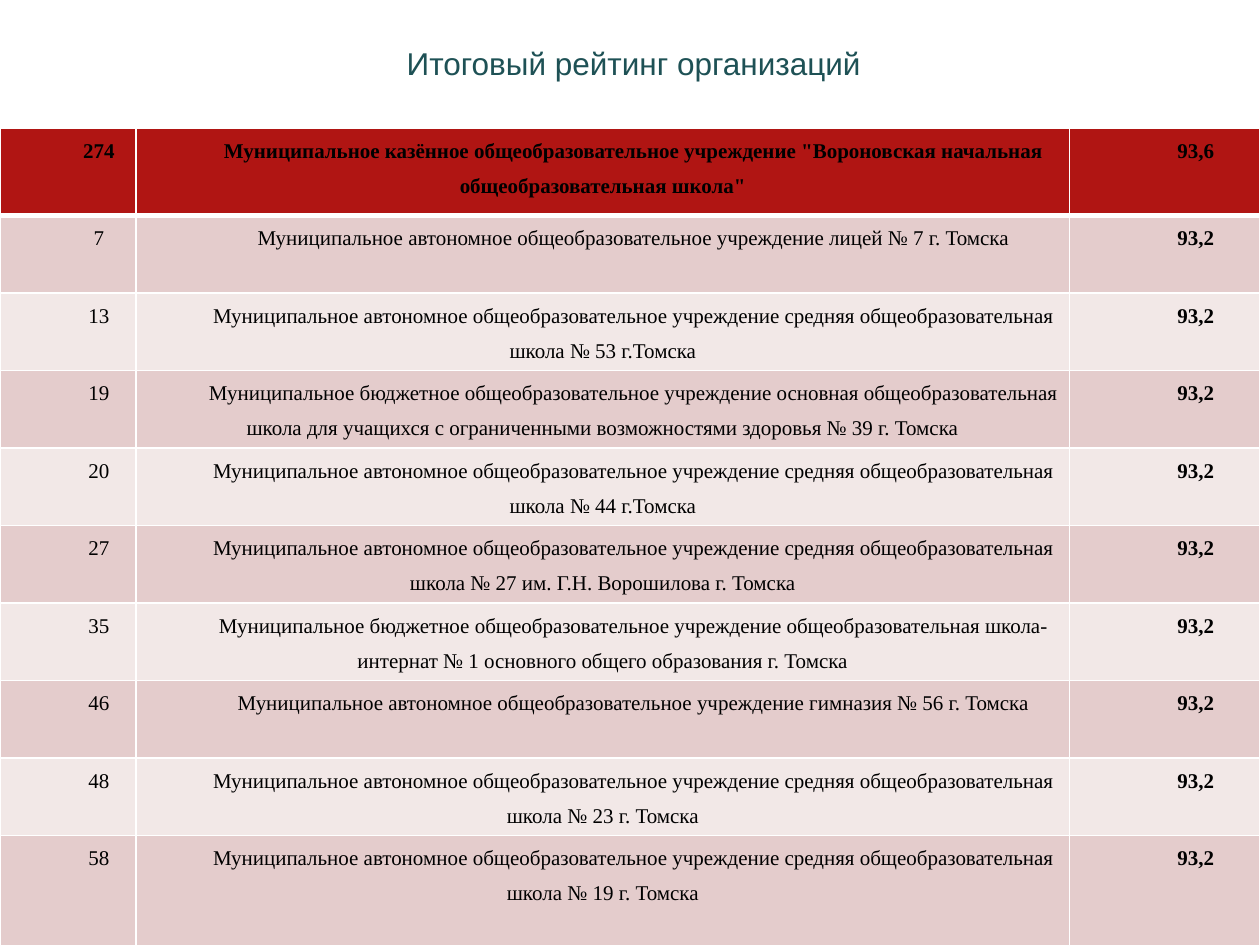
from lxml import etree
from pptx import Presentation
from pptx.dml.color import RGBColor
from pptx.enum.text import MSO_ANCHOR, PP_ALIGN
from pptx.oxml.ns import qn
from pptx.util import Inches, Pt

CENTER = PP_ALIGN.CENTER
TOP = MSO_ANCHOR.TOP
TITLE_ONLY = 5

GRID_COLUMNS, GRID_ROWS = 1000, 750
TITLE_BOX = (50, 30, 900, 125)
TABLE_BOX = (0, 102, 1000, 664)
COLUMN_SPANS = (108, 741, 151)
HEADER_SPAN, LAST_SPAN = 69, 103

HEADER_FILL = "B01513"
BAND_FILLS = ("E4CCCC", "F2E8E7")
BORDER = "FFFFFF"
THIN, THICK = 1, 3

TITLE = "Итоговый рейтинг организаций"
AUTONOMOUS = "Муниципальное автономное общеобразовательное учреждение "
BUDGET = "Муниципальное бюджетное общеобразовательное учреждение "
SECONDARY = AUTONOMOUS + "средняя общеобразовательная школа "
RATING = (
    ("274", "Муниципальное казённое общеобразовательное учреждение "
            "\"Вороновская начальная общеобразовательная школа\"", "93,6"),
    ("7", AUTONOMOUS + "лицей № 7 г. Томска", "93,2"),
    ("13", SECONDARY + "№ 53 г.Томска", "93,2"),
    ("19", BUDGET + "основная общеобразовательная школа для учащихся "
           "с ограниченными возможностями здоровья № 39 г. Томска", "93,2"),
    ("20", SECONDARY + "№ 44 г.Томска", "93,2"),
    ("27", SECONDARY + "№ 27 им. Г.Н. Ворошилова г. Томска", "93,2"),
    ("35", BUDGET + "общеобразовательная школа-интернат № 1 "
           "основного общего образования г. Томска", "93,2"),
    ("46", AUTONOMOUS + "гимназия № 56 г. Томска", "93,2"),
    ("48", SECONDARY + "№ 23 г. Томска", "93,2"),
    ("58", SECONDARY + "№ 19 г. Томска", "93,2"),
)


def color(code):
    return RGBColor.from_string(code)


def apply(target, values):
    for name, value in values.items():
        setattr(target, name, value)


def place(deck, box):
    column = deck.slide_width / GRID_COLUMNS
    row = deck.slide_height / GRID_ROWS
    left, top, width, height = box
    return [round(length) for length in
            (left * column, top * row, width * column, height * row)]


def write(para, text, font, size, bold, ink):
    para.alignment = CENTER
    span = para.add_run()
    span.text = text
    apply(span.font, {"name": font, "size": Pt(size), "bold": bold})
    span.font.color.rgb = color(ink)


def add_title(deck, page, box):
    title = page.shapes.title
    left, top, width, height = place(deck, box)
    apply(title, {"left": left, "top": top, "width": width, "height": height})
    frame = title.text_frame
    apply(frame, {"vertical_anchor": TOP, "word_wrap": True,
                  "margin_left": Inches(0.16), "margin_right": Inches(0.1)})
    write(frame.paragraphs[0], TITLE, "Arial", 18, False, "1E5155")


def add_borders(cell, widths):
    properties = cell._tc.get_or_add_tcPr()
    for side, width in widths.items():
        line = etree.SubElement(properties, qn(f"a:ln{side}"), w=str(Pt(width)))
        fill = etree.SubElement(line, qn("a:solidFill"))
        etree.SubElement(fill, qn("a:srgbClr"), val=BORDER)


def fill_cell(cell, text, bold, fill, borders):
    apply(cell, {"margin_left": Inches(0.07), "margin_right": Inches(0.07),
                 "margin_top": 0, "margin_bottom": 0, "vertical_anchor": TOP})
    add_borders(cell, borders)
    cell.fill.solid()
    cell.fill.fore_color.rgb = color(fill)
    para = cell.text_frame.paragraphs[0]
    para.line_spacing = 1.5
    para._p.get_or_add_pPr().set("indent", str(Inches(0.49)))
    write(para, text, "Times New Roman", 12, bold, "000000")


def add_rating(deck, page, box):
    table = page.shapes.add_table(
        len(RATING), len(COLUMN_SPANS), *place(deck, box)).table
    for column, span in zip(table.columns, COLUMN_SPANS):
        column.width = round(deck.slide_width * span / GRID_COLUMNS)
    middle_rows = len(RATING) - 2
    middle_span = (box[3] - HEADER_SPAN - LAST_SPAN) / middle_rows
    row_spans = [HEADER_SPAN] + [middle_span] * middle_rows + [LAST_SPAN]
    for number, (row, span) in enumerate(zip(table.rows, row_spans)):
        row.height = round(deck.slide_height * span / GRID_ROWS)
        header = number == 0
        fill = HEADER_FILL if header else BAND_FILLS[(number - 1) % 2]
        borders = {"L": THIN, "R": THIN,
                   "T": THICK if number == 1 else THIN,
                   "B": THICK if header else THIN}
        for index, (cell, text) in enumerate(zip(row.cells, RATING[number])):
            score = index == len(COLUMN_SPANS) - 1
            fill_cell(cell, text, header or score, fill, borders)


def main():
    deck = Presentation()
    apply(deck, {"slide_width": Inches(10), "slide_height": Inches(7.5)})
    page = deck.slides.add_slide(deck.slide_layouts[TITLE_ONLY])
    add_title(deck, page, TITLE_BOX)
    add_rating(deck, page, TABLE_BOX)
    deck.save("out.pptx")


if __name__ == "__main__":
    main()
